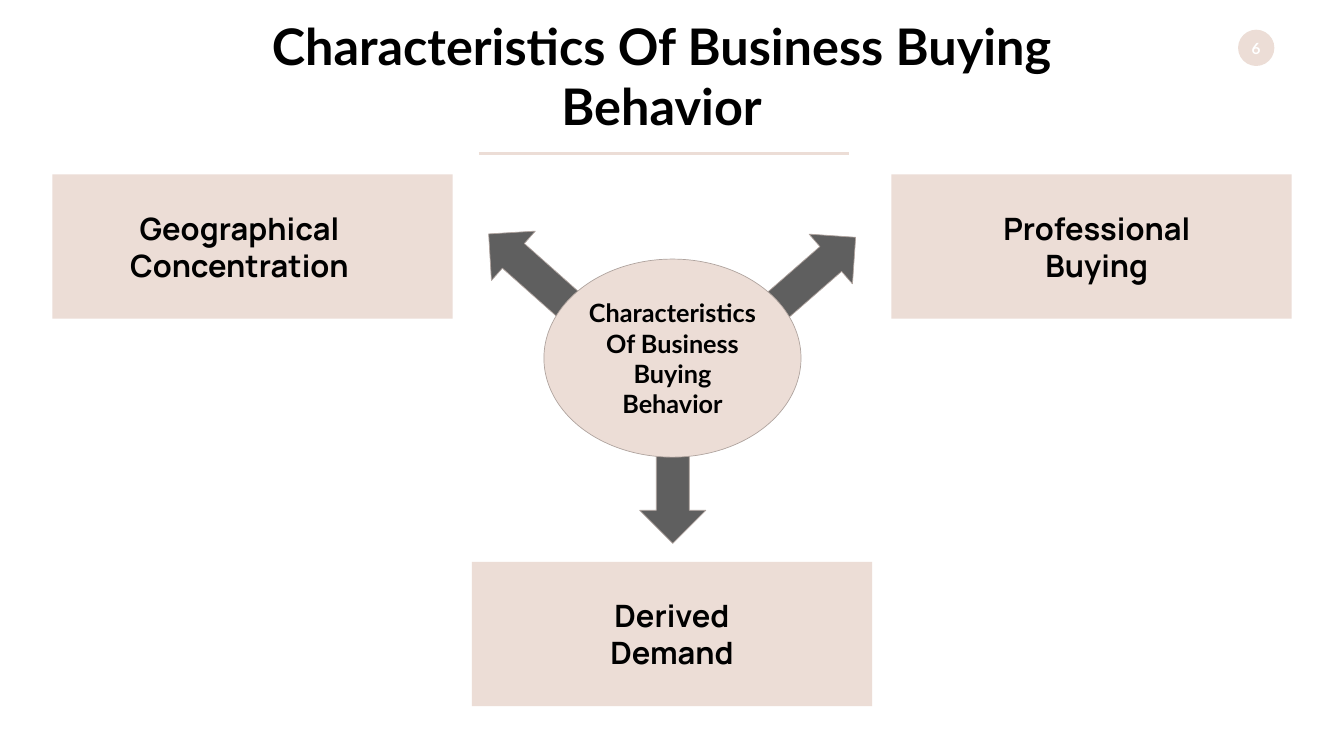
from dataclasses import dataclass

from lxml.etree import SubElement
from pptx import Presentation
from pptx.dml.color import RGBColor
from pptx.enum.shapes import MSO_CONNECTOR, MSO_SHAPE
from pptx.enum.text import MSO_ANCHOR, MSO_AUTO_SIZE, PP_ALIGN
from pptx.oxml.ns import qn
from pptx.util import Inches, Pt

COLORS = {"blush": "ECDDD6", "gray": "5F5F5F", "outline": "AFA39E",
          "black": "000000", "white": "FFFFFF"}
TOPIC = "Characteristics Of Business Buying Behavior"
TITLE_FORMAT = {"name": "Lato", "size": Pt(72), "bold": True}
HUB_FORMAT = {"name": "Lato", "size": Pt(36), "bold": True}
CARD_FORMAT = {"name": "Manrope", "size": Pt(44), "bold": True}
NUMBER_FORMAT = {"name": "Lato", "size": Pt(22), "bold": True}


@dataclass(frozen=True)
class Box:
    """A frame in percent of the slide's width and height."""
    left: float
    top: float
    width: float
    height: float


@dataclass(frozen=True)
class Card:
    left: float
    top: float
    lines: tuple[str, ...]
    shift: float = 0  # sideways move of the text, percent of slide width


@dataclass(frozen=True)
class Arrow:
    box: Box
    rotation: float


CARD_WIDTH, CARD_HEIGHT = 29.78, 19.07
CARDS = (
    Card(3.9, 23.07, ("Geographical", "Concentration"), -0.97),
    Card(35.11, 74.33, ("Derived", "Demand")),
    Card(66.32, 23.07, ("Professional", "Buying"), 0.4),
)
ARROWS = (
    Arrow(Box(35.3, 31.53, 8.4, 8.73), 221.6),
    Arrow(Box(56.3, 31.93, 8.4, 8.73), 318.9),
    Arrow(Box(46.06, 60.4, 7.99, 8.73), 90),
)

prs = Presentation()
prs.slide_width, prs.slide_height = Inches(26.66), Inches(15)
s = prs.slides.add_slide(prs.slide_layouts[5])


def x(percent: float) -> int:
    return round(prs.slide_width * percent / 100)


def y(percent: float) -> int:
    return round(prs.slide_height * percent / 100)


def frame(box: Box) -> tuple[int, int, int, int]:
    return x(box.left), y(box.top), x(box.width), y(box.height)


def rgb(name: str) -> RGBColor:
    return RGBColor.from_string(COLORS[name])


def add_shape(kind: MSO_SHAPE, box: Box, fill: str, outline: str | None = None):
    sp = s.shapes.add_shape(kind, *frame(box))
    sp.shadow.inherit = False
    sp.fill.solid()
    sp.fill.fore_color.rgb = rgb(fill)
    if outline:
        sp.line.color.rgb = rgb(outline)
        sp.line.width = Pt(1)
    else:
        sp.line.fill.background()
    return sp


def write(sp, lines: tuple[str, ...], font: dict, color: str = "black",
          anchor: MSO_ANCHOR = MSO_ANCHOR.MIDDLE) -> None:
    tf = sp.text_frame
    tf.word_wrap = True
    tf.auto_size = MSO_AUTO_SIZE.NONE
    tf.vertical_anchor = anchor
    tf.text = "\n".join(lines)
    for p in tf.paragraphs:
        p.alignment = PP_ALIGN.CENTER
        p.line_spacing = 1.0
        p.space_before = Pt(0)
        for r in p.runs:
            for name, value in font.items():
                setattr(r.font, name, value)
            r.font.color.rgb = rgb(color)


def add_card(card: Card) -> None:
    box = Box(card.left, card.top, CARD_WIDTH, CARD_HEIGHT)
    sp = add_shape(MSO_SHAPE.RECTANGLE, box, "blush")
    write(sp, card.lines, CARD_FORMAT)
    sp.text_frame.margin_left = x(max(0, 2 * card.shift))
    sp.text_frame.margin_right = x(max(0, -2 * card.shift))


def add_arrow(arrow: Arrow) -> None:
    sp = add_shape(MSO_SHAPE.RIGHT_ARROW, arrow.box, "gray", "outline")
    sp.rotation = arrow.rotation


def add_rule(left: float, right: float, top: float) -> None:
    rule = s.shapes.add_connector(MSO_CONNECTOR.STRAIGHT,
                                  x(left), y(top), x(right), y(top))
    rule.line.color.rgb = rgb("blush")
    rule.line.width = Pt(4.5)
    SubElement(rule._element.spPr, qn("a:effectLst"))


def main() -> None:
    title = s.shapes.title
    title.left, title.top, title.width, title.height = frame(
        Box(16.35, 1.6, 65.75, 16.8))
    write(title, (TOPIC,), TITLE_FORMAT, anchor=MSO_ANCHOR.TOP)
    add_rule(35.63, 63.2, 20.33)

    number = add_shape(MSO_SHAPE.OVAL, Box(92.12, 3.93, 2.7, 4.8), "blush")
    write(number, ("6",), NUMBER_FORMAT, "white")

    for arrow in ARROWS:
        add_arrow(arrow)
    for card in CARDS:
        add_card(card)
    hub = add_shape(MSO_SHAPE.OVAL, Box(40.47, 34.27, 19.13, 26.2),
                    "blush", "outline")
    write(hub, (TOPIC,), HUB_FORMAT)

    prs.save("out.pptx")


if __name__ == "__main__":
    main()
